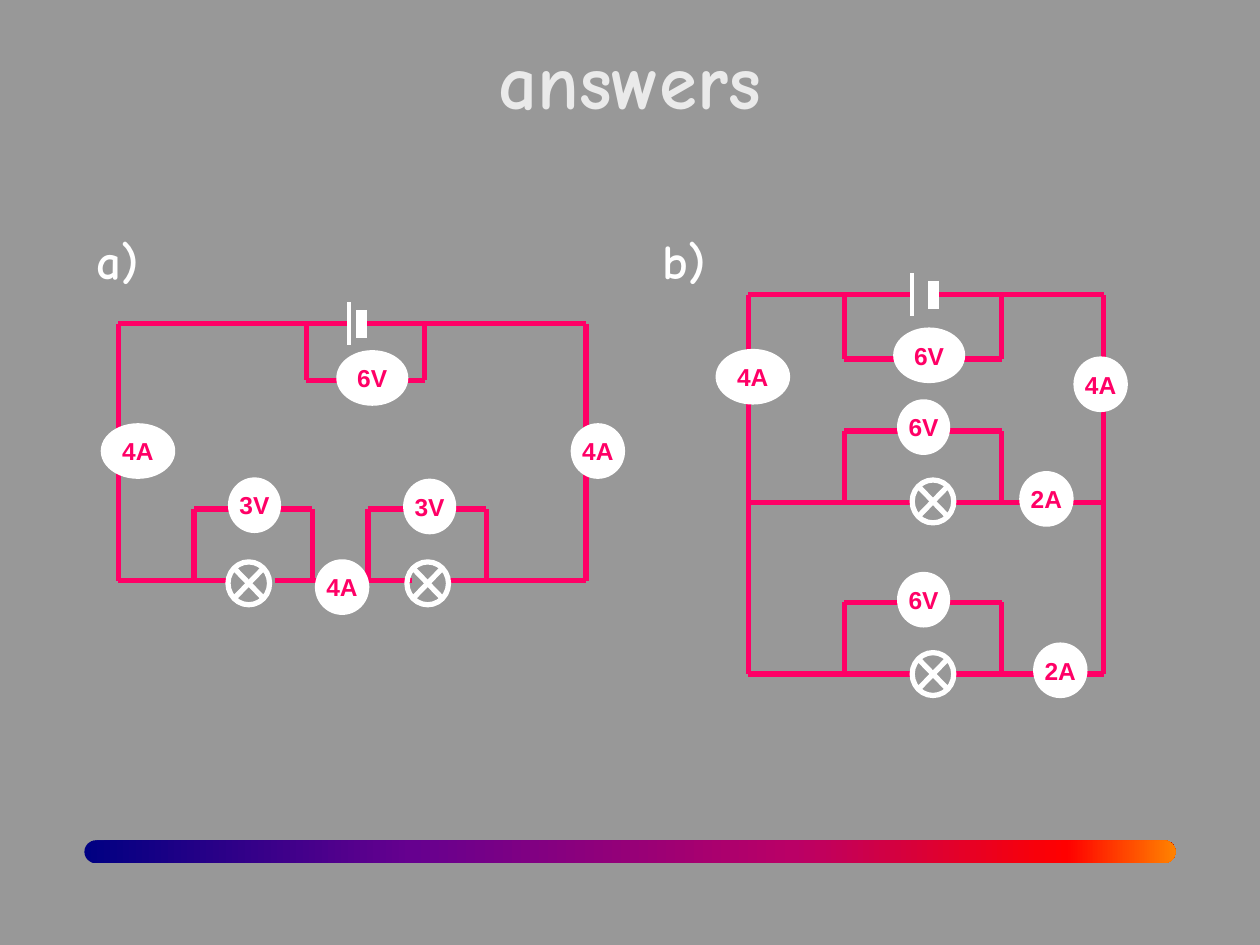
from lxml import etree
from pptx import Presentation
from pptx.dml.color import RGBColor
from pptx.enum.shapes import MSO_CONNECTOR, MSO_SHAPE as SHAPE
from pptx.enum.text import MSO_ANCHOR, PP_ALIGN
from pptx.oxml.ns import qn
from pptx.util import Inches, Pt

PINK, WHITE, PALE, GREY = "FF0066", "FFFFFF", "EAEAEA", "989898"
GRADIENT = [(0, "000082"), (30, "66008F"), (65, "BA0066"), (90, "FF0000"), (100, "FF8200")]

# text, left, top, width, height, size, colour, alignment
LABELS = [
    ("answers", 0, 0.21, 10, 0.83, 44, PALE, PP_ALIGN.CENTER),
    ("a)", 0.67, 1.78, 0.71, 0.57, 28, WHITE, PP_ALIGN.LEFT),
    ("b)", 5.16, 1.78, 0.71, 0.57, 28, WHITE, PP_ALIGN.LEFT),
]

# Horizontal wires are (y, x1, x2), vertical wires are (x, y1, y2),
# voltmeter loops are (left, right, rail y, loop y),
# cells are (x of long plate, x of short plate, y),
# lamps are (left, top), meters are (text, left, top, width).
SERIES = {
    "horizontal": [(2.57, 0.94, 2.77), (2.57, 2.87, 4.65),
                   (4.61, 0.94, 1.81), (4.61, 2.18, 3.27), (4.61, 3.57, 4.65)],
    "vertical": [(0.94, 2.57, 4.61), (4.65, 2.57, 4.61)],
    "loops": [(2.43, 3.37, 2.57, 3.02), (1.54, 2.48, 4.61, 4.04), (2.92, 3.86, 4.61, 4.04)],
    "cell": (2.77, 2.87, 2.57),
    "lamps": [(1.81, 4.46), (3.23, 4.46)],
    "meters": [("6V", 2.69, 2.8, 0.53), ("3V", 1.83, 3.81, 0.38), ("3V", 3.22, 3.82, 0.38),
               ("4A", 0.82, 3.38, 0.55), ("4A", 4.55, 3.38, 0.39), ("4A", 2.52, 4.46, 0.39)],
}
PARALLEL = {
    "horizontal": [(2.34, 5.94, 7.24), (2.34, 7.41, 8.76),
                   (3.99, 5.94, 7.24), (3.99, 7.57, 8.76),
                   (5.35, 5.94, 7.24), (5.35, 7.57, 8.76)],
    "vertical": [(5.94, 2.34, 5.35), (8.76, 2.34, 5.35)],
    "loops": [(6.7, 7.95, 2.34, 2.85), (6.7, 7.95, 3.99, 3.42), (6.7, 7.95, 5.35, 4.78)],
    "cell": (7.24, 7.41, 2.34),
    "lamps": [(7.24, 3.81), (7.24, 5.18)],
    "meters": [("6V", 7.11, 2.62, 0.53), ("6V", 7.14, 3.19, 0.38), ("6V", 7.14, 4.56, 0.38),
               ("4A", 5.7, 2.79, 0.55), ("4A", 8.54, 2.85, 0.39),
               ("2A", 8.11, 3.76, 0.39), ("2A", 8.22, 5.12, 0.39)],
}


def color(value):
    return RGBColor.from_string(value)


def format_text(para, size, font_name, font_color):
    for span in para.runs:
        span.font.size = Pt(size)
        span.font.name = font_name
        span.font.bold = True
        span.font.color.rgb = color(font_color)


def add_label(page, text, left, top, width, height, size, font_color, align):
    box = page.shapes.add_textbox(*map(Inches, (left, top, width, height)))
    box.text_frame.word_wrap = True
    box.text_frame.text = text
    para = box.text_frame.paragraphs[0]
    para.alignment = align
    format_text(para, size, "Comic Neue", font_color)


def add_line(page, x1, y1, x2, y2, line_color=PINK, width=3):
    line = page.shapes.add_connector(MSO_CONNECTOR.STRAIGHT, *map(Inches, (x1, y1, x2, y2)))
    line.line.color.rgb = color(line_color)
    line.line.width = Pt(width)
    etree.SubElement(line._element.spPr, qn("a:effectLst"))


def add_symbol(page, kind, left, top, width, height):
    """Add a preset shape with a white outline and no shadow."""
    symbol = page.shapes.add_shape(kind, *map(Inches, (left, top, width, height)))
    symbol.shadow.inherit = False
    symbol.line.color.rgb = color(WHITE)
    symbol.line.width = Pt(3)
    return symbol


def add_meter(page, text, left, top, width):
    meter = add_symbol(page, SHAPE.OVAL, left, top, width, 0.4)
    meter.fill.solid()
    meter.fill.fore_color.rgb = color(WHITE)
    frame = meter.text_frame
    frame.word_wrap = False
    frame.vertical_anchor = MSO_ANCHOR.MIDDLE
    frame.margin_left = frame.margin_right = Inches(0.07)
    frame.margin_top = frame.margin_bottom = Inches(0.04)
    frame.text = text
    frame.paragraphs[0].alignment = PP_ALIGN.CENTER
    format_text(frame.paragraphs[0], 14, "Arial", PINK)


def add_circuit(page, circuit):
    for y, x1, x2 in circuit["horizontal"]:
        add_line(page, x1, y, x2, y)
    for x, y1, y2 in circuit["vertical"]:
        add_line(page, x, y1, x, y2)
    for left, right, rail, loop in circuit["loops"]:
        add_line(page, left, loop, right, loop)
        for x in (left, right):
            add_line(page, x, min(rail, loop), x, max(rail, loop))
    long_x, short_x, y = circuit["cell"]
    for x, half, width in ((long_x, 0.17, 2.25), (short_x, 0.11, 6)):
        add_line(page, x, y - half, x, y + half, WHITE, width)
    for left, top in circuit["lamps"]:
        lamp = add_symbol(page, SHAPE.FLOWCHART_SUMMING_JUNCTION, left, top, 0.33, 0.34)
        lamp.fill.background()
    for meter in circuit["meters"]:
        add_meter(page, *meter)


def add_gradient_bar(page):
    bar = page.shapes.add_shape(SHAPE.ROUNDED_RECTANGLE, *map(Inches, (0.67, 6.67, 8.66, 0.18)))
    bar.adjustments[0] = 0.5
    bar.shadow.inherit = False
    bar.line.fill.background()
    bar.fill.gradient()
    bar.fill.gradient_angle = 0
    stops = bar._element.spPr.find(".//" + qn("a:gsLst"))
    for stop in list(stops):
        stops.remove(stop)
    for percent, value in GRADIENT:
        stop = etree.SubElement(stops, qn("a:gs"), pos=str(percent * 1000))
        etree.SubElement(stop, qn("a:srgbClr"), val=value)


def main():
    deck = Presentation()
    deck.slide_width, deck.slide_height = Inches(10), Inches(7.5)
    page = deck.slides.add_slide(deck.slide_layouts[6])
    page.background.fill.solid()
    page.background.fill.fore_color.rgb = color(GREY)
    add_gradient_bar(page)
    for circuit in (SERIES, PARALLEL):
        add_circuit(page, circuit)
    for label in LABELS:
        add_label(page, *label)
    deck.save("out.pptx")


if __name__ == "__main__":
    main()
